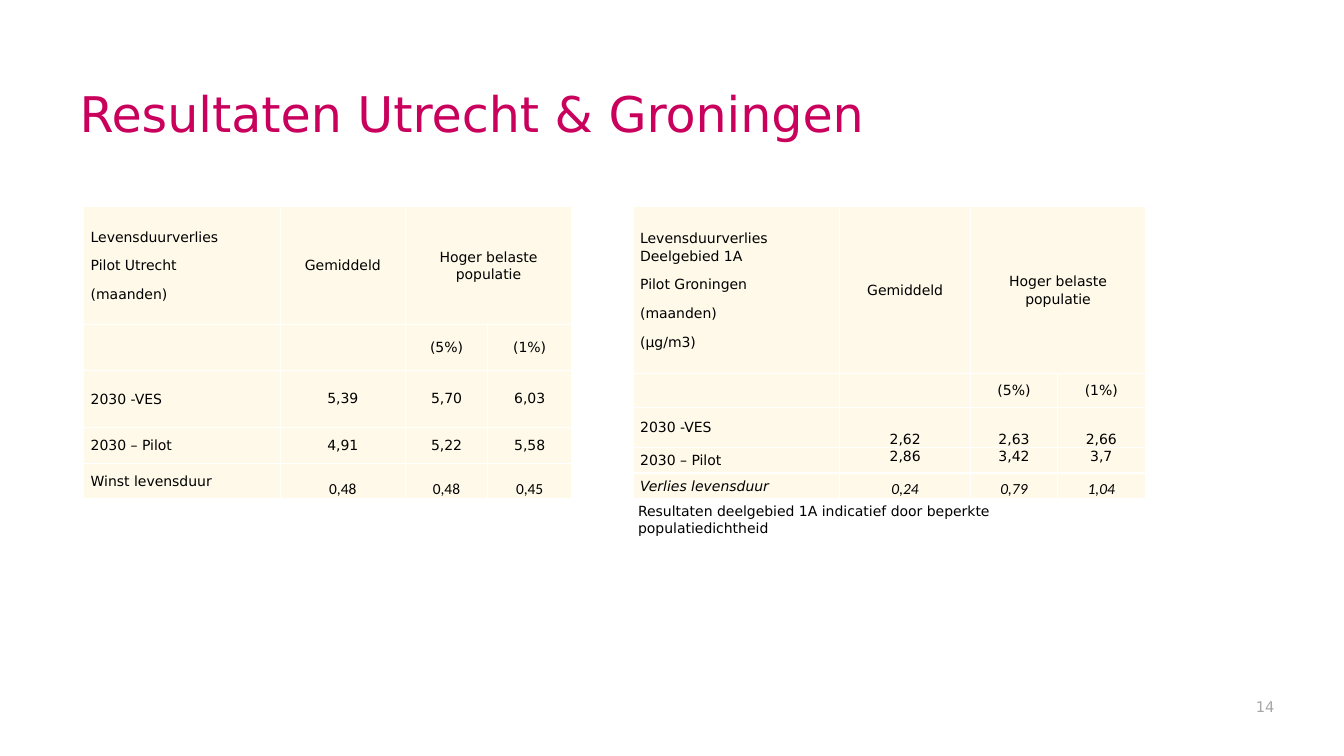
from lxml.etree import SubElement
from pptx import Presentation
from pptx.dml.color import RGBColor
from pptx.enum.text import MSO_ANCHOR as Anchor, MSO_AUTO_SIZE as Auto, PP_ALIGN as Align
from pptx.oxml.ns import qn
from pptx.util import Inches, Pt

PARA = {"alignment", "line_spacing", "space_after"}
FONT = {"size", "name", "italic"}

BASE = {"size": Pt(10), "name": "DejaVu Sans"}
CELL = BASE | {"vertical_anchor": Anchor.MIDDLE, "margin_left": Pt(5),
               "margin_right": Pt(5), "margin_top": 0, "margin_bottom": 0}
LABEL = CELL | {"line_spacing": 1.07, "space_after": Pt(8)}
VALUE = CELL | {"alignment": Align.CENTER}
HEAD = LABEL | {"alignment": Align.CENTER}
LOW = HEAD | {"vertical_anchor": Anchor.BOTTOM}
HIGH = HEAD | {"vertical_anchor": Anchor.TOP}
SUM = VALUE | {"vertical_anchor": Anchor.BOTTOM, "size": Pt(11), "name": "Calibri",
               "margin_left": Pt(0.7), "margin_right": Pt(0.7), "margin_top": Pt(0.7)}
SLANT = {"italic": True}

SPLIT = (40.3, 25.6, 16.9, 17.2)  # column shares of a table's width, in percent
TOPS = ("Gemiddeld", "Hoger belaste populatie", "")
SUBS = ("", "", "(5%)", "(1%)")

# Each row: height in percent of the slide, label style, value style, texts
UTRECHT = [
    (15.6, LABEL, HEAD, ("Levensduurverlies\nPilot Utrecht\n(maanden)", *TOPS)),
    (6.13, LABEL, VALUE, SUBS),
    (7.47, LABEL, VALUE, ("2030 -VES", "5,39", "5,70", "6,03")),
    (4.75, LABEL, VALUE, ("2030 – Pilot", "4,91", "5,22", "5,58")),
    (4.75, LABEL, SUM, ("Winst levensduur", "0,48", "0,48", "0,45")),
]
GRONINGEN = [
    (22.13, LABEL, HEAD,
     ("Levensduurverlies Deelgebied 1A\nPilot Groningen\n(maanden)\n(µg/m3)", *TOPS)),
    (4.4, LABEL, VALUE, SUBS),
    (5.33, LABEL, LOW, ("2030 -VES", "2,62", "2,63", "2,66")),
    (3.4, LABEL, HIGH, ("2030 – Pilot", "2,86", "3,42", "3,7")),
    (3.4, LABEL | SLANT, SUM | SLANT, ("Verlies levensduur", "0,24", "0,79", "1,04")),
]


def tint(code):
    return RGBColor.from_string(code)


class Deck:
    ink, fill, rule = "000000", "FEF9E8", "FFFFFF"

    def __init__(self):
        self.show = Presentation()
        self.show.slide_width = Inches(13.33)
        self.show.slide_height = Inches(7.5)
        self.slide = self.show.slides.add_slide(self.show.slide_layouts[5])

    def wide(self, share):
        return round(self.show.slide_width * share / 100)

    def high(self, share):
        return round(self.show.slide_height * share / 100)

    def area(self, left, top, width, height):
        """Turn percentages of the slide into a box of lengths."""
        return self.wide(left), self.high(top), self.wide(width), self.high(height)

    def typeset(self, host, frame, text, look, ink=None):
        """Fill frame with one paragraph a line; host takes margins and anchor."""
        frame.text = text
        for key, value in look.items():
            if key not in PARA | FONT:
                setattr(host, key, value)
        for para in frame.paragraphs:
            for key in PARA & look.keys():
                setattr(para, key, look[key])
            for run in para.runs:
                run.font.color.rgb = tint(ink or self.ink)
                for key in FONT & look.keys():
                    setattr(run.font, key, look[key])

    def title(self, text, box, look, ink):
        shape = self.slide.shapes.title
        shape.left, shape.top, shape.width, shape.height = self.area(*box)
        self.typeset(shape.text_frame, shape.text_frame, text, look, ink)

    def text(self, text, box, look, ink=None):
        frame = self.slide.shapes.add_textbox(*self.area(*box)).text_frame
        frame.word_wrap = True
        self.typeset(frame, frame, text, look, ink)

    def edge(self, cell):
        props = cell._tc.get_or_add_tcPr()
        for side in ("lnL", "lnR", "lnT", "lnB"):
            line = SubElement(props, qn(f"a:{side}"), w=str(Pt(1)))
            paint = SubElement(line, qn("a:solidFill"))
            SubElement(paint, qn("a:srgbClr"), val=self.rule)

    def table(self, rows, left, top, width):
        box = self.area(left, top, width, sum(row[0] for row in rows))
        table = self.slide.shapes.add_table(len(rows), len(SPLIT), *box).table
        table.first_row = table.horz_banding = False
        for col, share in zip(table.columns, SPLIT):
            col.width = self.wide(width * share / 100)
        for r, (height, label, value, texts) in enumerate(rows):
            table.rows[r].height = self.high(height)
            for c, text in enumerate(texts):
                cell = table.cell(r, c)
                self.edge(cell)
                cell.fill.solid()
                cell.fill.fore_color.rgb = tint(self.fill)
                self.typeset(cell, cell.text_frame, text, value if c else label)
        table.cell(0, 2).merge(table.cell(0, 3))


def main():
    deck = Deck()
    deck.title("Resultaten Utrecht & Groningen", (5.18, 11.2, 89.65, 13.87),
               {"size": Pt(35.1), "name": "DejaVu Sans", "line_spacing": 0.9,
                "alignment": Align.LEFT, "vertical_anchor": Anchor.TOP,
                "auto_size": Auto.NONE}, "CA005D")
    deck.table(UTRECHT, 6.23, 27.33, 36.31)
    deck.table(GRONINGEN, 47.11, 27.33, 38.11)
    deck.text("Resultaten deelgebied 1A indicatief door beperkte populatiedichtheid",
              (46.74, 65.87, 35.41, 5.87), BASE)
    deck.text("14", (53.79, 90.67, 41.04, 4.67),
              BASE | {"size": Pt(10.5), "alignment": Align.RIGHT, "space_after": Pt(6),
                      "vertical_anchor": Anchor.BOTTOM, "margin_right": 0}, "A6A6A6")
    deck.show.save("out.pptx")


if __name__ == "__main__":
    main()
